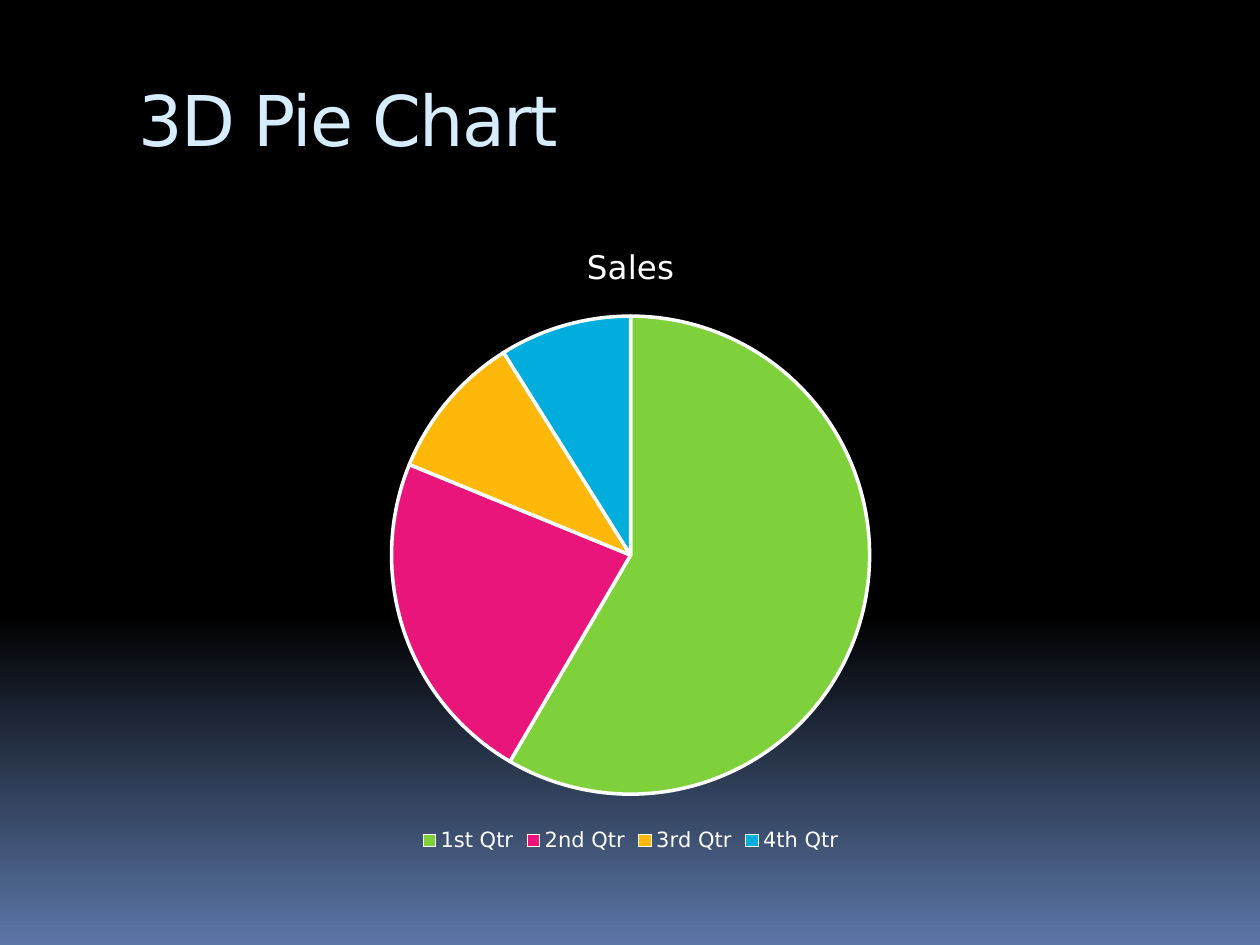
from copy import deepcopy

from lxml import etree
from pptx import Presentation
from pptx.chart.data import CategoryChartData
from pptx.dml.color import RGBColor
from pptx.enum.chart import XL_CHART_TYPE, XL_LEGEND_POSITION
from pptx.enum.text import MSO_ANCHOR, PP_ALIGN
from pptx.oxml.ns import qn
from pptx.util import Inches, Pt

PIE = XL_CHART_TYPE.PIE
BOTTOM = XL_LEGEND_POSITION.BOTTOM
TOP = MSO_ANCHOR.TOP
LEFT = PP_ALIGN.LEFT

BLACK = RGBColor(0x00, 0x00, 0x00)
WHITE = RGBColor(0xFF, 0xFF, 0xFF)
DUSK_BLUE = RGBColor(0x5B, 0x77, 0xA8)
PALE_BLUE = RGBColor(0xD6, 0xEC, 0xFF)
SLICE_COLORS = (
    RGBColor(0x7F, 0xD1, 0x3B),
    RGBColor(0xEA, 0x15, 0x7A),
    RGBColor(0xFE, 0xB8, 0x0A),
    RGBColor(0x00, 0xAD, 0xDC),
)
FONT_NAME = "DejaVu Sans"
WIDTH, HEIGHT = Inches(10), Inches(7.5)
TITLE_BOX = (Inches(1), Inches(0.56), Inches(8.5), Inches(1))
CHART_BOX = (Inches(1.17), Inches(1.75), Inches(7.67), Inches(5.06))
PLOT_SHARES = {"x": 0.25, "y": 0.15, "w": 0.5, "h": 0.75}
SALES = {"1st Qtr": 59, "2nd Qtr": 23, "3rd Qtr": 10, "4th Qtr": 9}


def format_font(font, size, color):
    """Apply the slide's typeface with a size and colour."""
    font.name = FONT_NAME
    font.size = Pt(size)
    font.bold = False
    font.color.rgb = color


def paint_background(slide):
    """Fade the background from black to blue over its lower third."""
    fill = slide.background.fill
    fill.gradient()
    fill.gradient_angle = 270
    stop_list = slide.element.find(".//" + qn("a:gsLst"))
    stop_list.insert(1, deepcopy(stop_list[0]))
    stops = ((0, BLACK), (0.65, BLACK), (1, DUSK_BLUE))
    for stop, (position, color) in zip(fill.gradient_stops, stops):
        stop.position = position
        stop.color.rgb = color


def place_title(slide, box, text):
    """Move the title placeholder into the box and format its text."""
    title = slide.shapes.title
    title.left, title.top, title.width, title.height = box
    frame = title.text_frame
    frame.text = text
    frame.vertical_anchor = TOP
    paragraph = frame.paragraphs[0]
    paragraph.alignment = LEFT
    format_font(paragraph.font, 40, PALE_BLUE)
    paragraph.runs[0].font._element.set("spc", "-100")


def set_plot_layout(chart, shares):
    """Fix the inner plot area at the given shares of the chart."""
    plot_area = chart.element.find(".//" + qn("c:plotArea"))
    layout = plot_area.find(qn("c:layout"))
    if layout is None:
        layout = etree.Element(qn("c:layout"))
        plot_area.insert(0, layout)
    manual = etree.SubElement(layout, qn("c:manualLayout"))
    settings = {"layoutTarget": "inner", "xMode": "edge", "yMode": "edge", **shares}
    for name, value in settings.items():
        etree.SubElement(manual, qn(f"c:{name}")).set("val", str(value))


def place_sales_pie(slide, box):
    """Place the sales pie with its title and legend in the box."""
    data = CategoryChartData()
    data.categories = list(SALES)
    data.add_series("Sales", list(SALES.values()))
    chart = slide.shapes.add_chart(PIE, *box, data).chart
    format_font(chart.font, 10, WHITE)

    chart.has_title = True
    title_frame = chart.chart_title.text_frame
    title_frame.text = "Sales"
    format_font(title_frame.paragraphs[0].font, 18.6, WHITE)
    chart.chart_title.include_in_layout = False

    chart.has_legend = True
    chart.legend.position = BOTTOM
    chart.legend.include_in_layout = False
    format_font(chart.legend.font, 12, WHITE)

    plot = chart.plots[0]
    plot.vary_by_categories = True
    for index, color in enumerate(SLICE_COLORS):
        slice_format = plot.series[0].points[index].format
        slice_format.fill.solid()
        slice_format.fill.fore_color.rgb = color
        slice_format.line.color.rgb = WHITE
        slice_format.line.width = Pt(2)
    set_plot_layout(chart, PLOT_SHARES)


def main():
    """Build and save the pie chart slide."""
    presentation = Presentation()
    presentation.slide_width, presentation.slide_height = WIDTH, HEIGHT
    slide = presentation.slides.add_slide(presentation.slide_layouts[5])
    paint_background(slide)
    place_title(slide, TITLE_BOX, "3D Pie Chart")
    place_sales_pie(slide, CHART_BOX)
    presentation.save("out.pptx")


if __name__ == "__main__":
    main()
